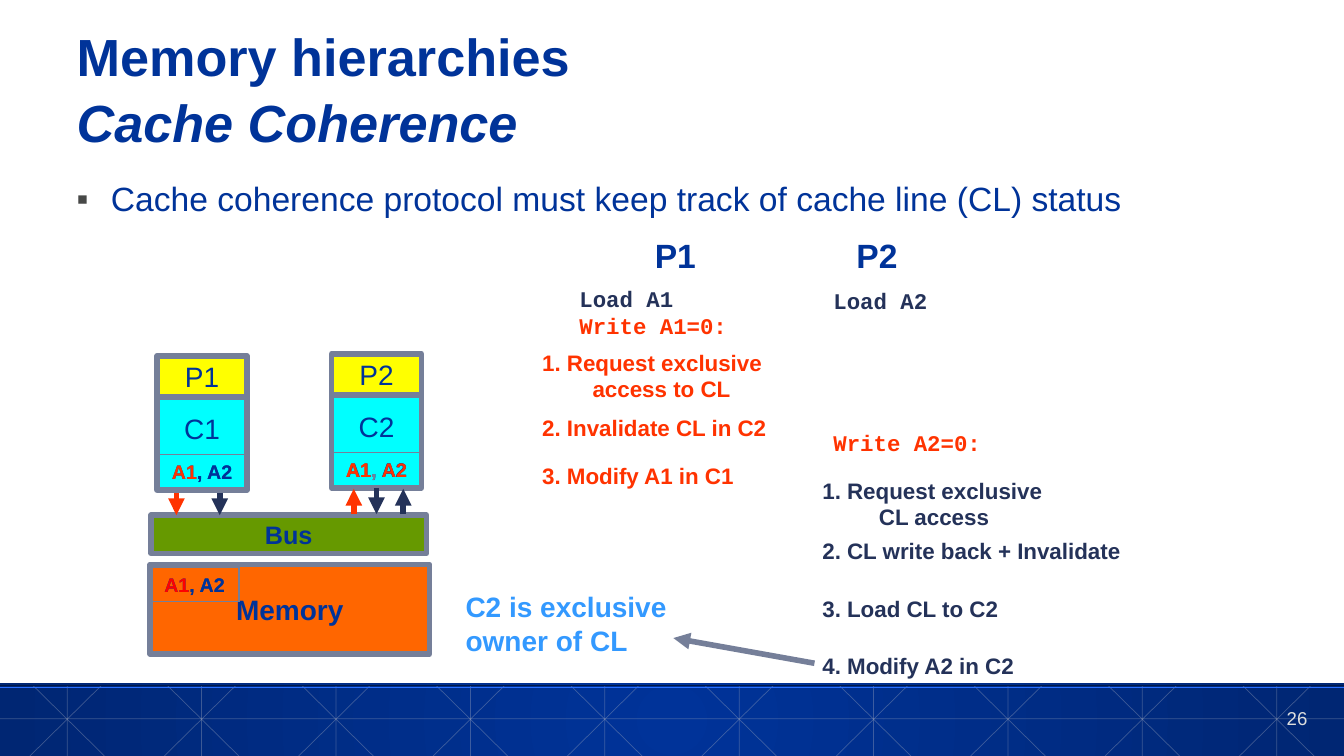
import copy
import pptx
import pptx.dml.color
import pptx.enum.dml
import pptx.enum.shapes
import pptx.enum.text
import pptx.oxml
import pptx.oxml.ns
import pptx.util

HUES = {
    "navy": "003399", "deep": "002673", "edge": "00194C", "glow": "2970FF",
    "mesh": "ACB2C2", "gray": "757F99", "ink": "243259", "red": "FF3300",
    "pure": "FF0000", "sky": "3399FF", "cyan": "00FFFF", "gold": "FFFF00",
    "green": "669900", "orange": "FF6600", "pale": "DDDEDD", "dark": "474847",
}
CELL = 0.1  # grid step in inches; all boxes are given in columns and rows
ALIGN = pptx.enum.text.PP_ALIGN
ANCHOR = pptx.enum.text.MSO_ANCHOR
RECT = pptx.enum.shapes.MSO_SHAPE.RECTANGLE
FLAT = dict(margin_left=0, margin_top=0, margin_right=0, margin_bottom=0, word_wrap=True)
MID = {"alignment": ALIGN.CENTER}
NODE = 'xmlns:a="http://schemas.openxmlformats.org/drawingml/2006/main"'


def hue(name):
    return pptx.dml.color.RGBColor.from_string(HUES[name])


def grid(*cells):
    return [pptx.util.Inches(c * CELL) for c in cells]


def inner(box, x, y, w, h):
    return grid(box[0] + x, box[1] + y, w, h)


def xml(text):
    return pptx.oxml.parse_xml(text.replace("/>", f" {NODE}/>", 1))


def style(item, form):
    for key, value in form.items():
        setattr(item, key, value)


def write(para, runs, size, face="Arial", bold=True, form=None):
    """Fill a paragraph with (text, hue, italic) runs; a newline is a line break."""
    style(para, form or {})
    for text, tint, *slant in runs:
        for i, piece in enumerate(text.split("\n")):
            if i:
                para.add_line_break()
                para._p[-1].append(copy.deepcopy(para._p[-2].rPr))
            run = para.add_run()
            run.text = piece
            style(run.font, {"size": pptx.util.Pt(size), "name": face,
                             "bold": bold, "italic": bool(slant)})
            run.font.color.rgb = hue(tint)


def hang(para, depth):
    para._p.get_or_add_pPr().set("marL", str(pptx.util.Inches(depth)))
    para._p.get_or_add_pPr().set("indent", str(-pptx.util.Inches(depth)))


def note(slide, spot, runs, size, **kind):
    frame = slide.shapes.add_textbox(*spot).text_frame
    frame.word_wrap = True
    write(frame.paragraphs[0], runs, size, **kind)
    return frame


def block(slide, spot, runs, size, fill=None, width=4, bold=True, **frame):
    shape = slide.shapes.add_shape(RECT, *spot)
    shape.shadow.inherit = False
    if fill:
        shape.fill.solid()
        shape.fill.fore_color.rgb = hue(fill)
    else:
        shape.fill.background()
    shape.line.color.rgb = hue("gray")
    shape.line.width = pptx.util.Pt(width)
    style(shape.text_frame, {"word_wrap": False, "vertical_anchor": ANCHOR.MIDDLE, **frame})
    write(shape.text_frame.paragraphs[0], runs, size, bold=bold, form=MID)
    return shape


def tag(slide, spot, runs):
    block(slide, spot, runs, 14, width=1, word_wrap=True, vertical_anchor=ANCHOR.TOP)


def line(slide, ends, tint, width, head=False, alpha=None):
    link = slide.shapes.add_connector(
        pptx.enum.shapes.MSO_CONNECTOR.STRAIGHT, *grid(*ends))
    link.line.color.rgb = hue(tint)
    link.line.width = pptx.util.Pt(width)
    stroke = link.line._get_or_add_ln()
    if alpha:
        stroke.find(".//" + pptx.oxml.ns.qn("a:srgbClr")).append(
            xml(f'<a:alpha val="{alpha * 1000}"/>'))
    if head:
        stroke.append(xml('<a:tailEnd type="triangle"/>'))
    link._element.spPr.append(xml("<a:effectLst/>"))
    return link


def footer(slide, box):
    x, y, w, h = box
    band = slide.shapes.add_shape(RECT, *grid(*box))
    band.shadow.inherit = False
    band.line.fill.background()
    band.fill.gradient()
    for stop, tint in zip(band.fill.gradient_stops, ("navy", "deep")):
        stop.color.rgb = hue(tint)
    for stop, place in zip(band.fill.gradient_stops, (0, 1)):
        stop.position = place
    lin = band._element.spPr.find(".//" + pptx.oxml.ns.qn("a:lin"))
    lin.getparent().replace(lin, pptx.oxml.parse_xml(
        f'<a:path {NODE} path="circle"><a:fillToRect l="50000" t="50000" '
        'r="50000" b="50000"/></a:path>'))
    top, low, step = y + 0.2, y + h, w / 10
    for col in range(10):
        mid = x + step * (col + 0.5)
        for up, down in ((0, 0), (-3.4, 3.7), (3.4, -3.7)):
            line(slide, (mid + up, top, mid + down, low), "mesh", 0.5, alpha=35)
    line(slide, (x, y + 3.5, x + w, y + 3.5), "mesh", 0.5, alpha=35)
    line(slide, (x, top, x + w, top), "edge", 1.25)
    line(slide, (x, y + 0.4, x + w, y + 0.4), "glow", 1)
    frame = note(slide, inner(box, 126, 2.3, 3.7, 2.2), [("26", "pale")], 13.3,
                 bold=False, form={"alignment": ALIGN.RIGHT})
    style(frame, {**FLAT, "vertical_anchor": ANCHOR.BOTTOM})


def heading(slide, box):
    title, body = slide.placeholders[0], slide.placeholders[1]
    for part, spot in ((title, (0, 0, box[2], 13.1)), (body, (0, 15.2, box[2], 48.8))):
        style(part, dict(zip(("left", "top", "width", "height"), inner(box, *spot))))
        style(part.text_frame, {**FLAT, "auto_size": pptx.enum.text.MSO_AUTO_SIZE.NONE})
    title.text_frame.vertical_anchor = ANCHOR.MIDDLE
    write(title.text_frame.paragraphs[0],
          [("Memory hierarchies\n", "navy"), ("Cache Coherence", "navy", True)], 37.3,
          form={"alignment": ALIGN.LEFT, "line_spacing": 1.05})
    body.text_frame.vertical_anchor = ANCHOR.TOP
    para = body.text_frame.paragraphs[0]
    hang(para, 0.34)
    props = para._p.get_or_add_pPr()
    props.append(pptx.oxml.parse_xml(
        f'<a:buClr {NODE}><a:srgbClr val="{HUES["dark"]}"/></a:buClr>'))
    props.append(xml('<a:buFont typeface="Arial"/>'))
    props.append(xml('<a:buChar char="▪"/>'))
    write(para, [("Cache coherence protocol must keep track of cache line (CL) status", "navy")],
          24, bold=False, form={"line_spacing": 1.1, "space_before": pptx.util.Pt(0)})


def core(slide, box, num, tags):
    """Processor over its cache, with the cache line tags layered in order."""
    cache = block(slide, inner(box, 0, 4.1, box[2], 9.2), [(f"C{num}", "navy")], 20, "cyan",
                  bold=False, vertical_anchor=ANCHOR.TOP, margin_top=pptx.util.Inches(0.14))
    block(slide, inner(box, 0, 0, box[2], 4.1), [(f"P{num}", "navy")], 20, "gold", bold=False)
    for first, comma, last in tags:
        tag(slide, inner(box, 0.1, 9.8, box[2] - 0.2, 3.4),
            [("A1", first), (", ", comma), ("A2", last)])
    return cache


def machine(slide, box):
    x, y, w, h = box
    block(slide, inner(box, 0, 20.9, w, 8.9), [("Memory", "navy")], 20, "orange")
    core(slide, (x + 0.7, y + 0.2, 8.9), 1, [("navy",) * 3, ("red", "navy", "navy")])
    cache = core(slide, (x + 18, y, 8.9), 2,
                 [("navy",) * 3, ("red", "gray", "navy"), ("red", "gray", "red")])
    block(slide, inner(box, 0.1, 16, 27.3, 3.8), [("Bus", "navy")], 18, "green")
    for first in ("navy", "pure"):
        tag(slide, inner(box, 0, 21.2, 8.8, 3.4), [("A1", first), (", A2", "navy")])
    high, low = y + 13.4, y + 15.9
    for col, down, tint in ((2.6, True, "red"), (6.9, True, "ink"), (20.2, False, "red"),
                            (25.1, False, "ink")):
        start, end = (high + 0.4, low + 0.1) if down else (low, high)
        line(slide, (x + col, start, x + col, end), tint, 4, head=True)
    mid = x + 22.45
    line(slide, (mid, high, mid, low), "ink", 4, head=True).begin_connect(cache, 2)


def lane(slide, box, name, shift, tint, steps):
    """Column heading and the numbered steps below it."""
    note(slide, inner(box, shift, 0, 20, 5), [(name, "navy")], 24, form=MID)
    for row, high, text in steps:
        frame = note(slide, inner(box, 0, row, box[2], high), [(text, tint)], 16)
        hang(frame.paragraphs[0], 0.5)


def traces(slide, box):
    x, y = box[:2]
    code = "Courier New"
    lane(slide, (x, y, 27.8), "P1", 4.2, "red", (
        (11.3, 6.4, "1. Request exclusive\naccess to CL"),
        (17.8, 3.7, "2. Invalidate CL in C2"),
        (22.6, 3.7, "3. Modify A1 in C1")))
    lane(slide, (x + 27.8, y, 33.7), "P2", -3.6, "ink", (
        (24, 6.4, "1. Request exclusive\n CL access"),
        (30, 3.7, "2. CL write back + Invalidate"),
        (35.8, 3.7, "3. Load CL to C2"),
        (41.4, 3.7, "4. Modify A2 in C2")))
    note(slide, inner(box, 3.7, 5, 21.1, 11.7),
         [("Load A1\n", "ink"), ("Write A1=0:", "red")], 16, face=code)
    frame = note(slide, inner(box, 28.9, 5.2, 17.7, 18.5), [("Load A2", "ink")], 16, face=code)
    write(frame.add_paragraph(), [("Write A2=0:", "red")], 16, face=code,
          form={"space_before": pptx.util.Pt(82)})
    line(slide, (x + 28, y + 43, x + 14, y + 40.5), "gray", 4, head=True)
    note(slide, inner(box, -7.6, 35.2, 29.7, 7.7), [("C2 is exclusive owner of CL", "sky")], 20)


def main():
    deck = pptx.Presentation()
    style(deck, dict(zip(("slide_width", "slide_height"), grid(133.33, 75))))
    slide = deck.slides.add_slide(deck.slide_layouts[1])
    footer(slide, (0, 67.8, 133.33, 7.2))
    heading(slide, (7.6, 2.1, 118.1, 64))
    machine(slide, (14.9, 35.1, 27.7, 29.8))
    traces(slide, (52.8, 22.8, 61.5, 45.1))
    deck.save("out.pptx")


if __name__ == "__main__":
    main()
